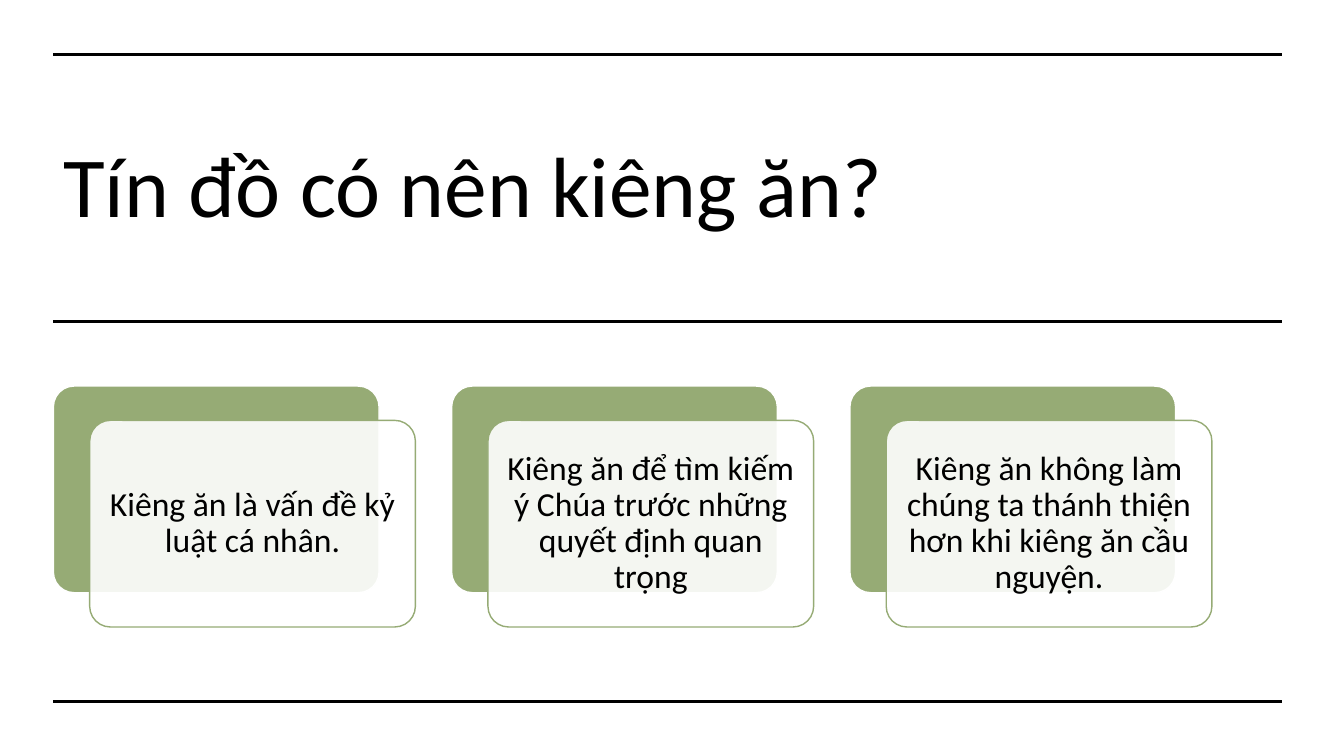
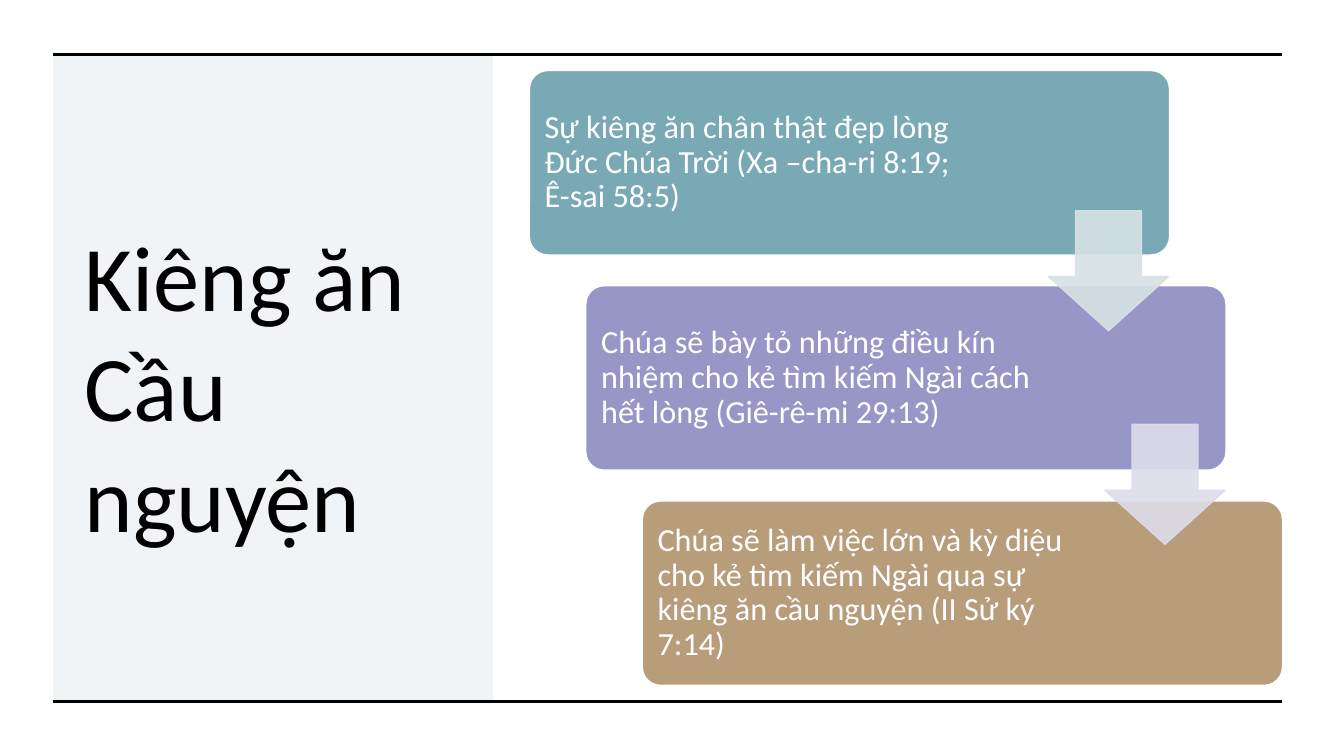
from lxml import etree
from pptx import Presentation
from pptx.dml.color import RGBColor
from pptx.enum.shapes import MSO_CONNECTOR, MSO_SHAPE
from pptx.enum.text import MSO_ANCHOR, PP_ALIGN
from pptx.oxml.ns import qn
from pptx.util import Inches, Pt

ROUNDED = MSO_SHAPE.ROUNDED_RECTANGLE
RECTANGLE = MSO_SHAPE.RECTANGLE
DOWN_ARROW = MSO_SHAPE.DOWN_ARROW
STRAIGHT = MSO_CONNECTOR.STRAIGHT
MIDDLE = MSO_ANCHOR.MIDDLE
LEFT, CENTER = PP_ALIGN.LEFT, PP_ALIGN.CENTER

BLACK = RGBColor(0x00, 0x00, 0x00)
WHITE = RGBColor(0xFF, 0xFF, 0xFF)
GREEN = RGBColor(0x96, 0xAB, 0x75)
PANEL_BLUE = RGBColor(0x7F, 0x95, 0xBA)
TEAL = RGBColor(0x7A, 0xA9, 0xB6)
PURPLE = RGBColor(0x98, 0x96, 0xC6)
TAN = RGBColor(0xB8, 0x9D, 0x7B)
PALE_TEAL = RGBColor(0xD7, 0xE2, 0xE5)
PALE_PURPLE = RGBColor(0xDD, 0xDD, 0xEA)

FONT = "Calibri"
MARGIN_LEFT, MARGIN_RIGHT = 0.53, 12.72
RULE_TOP, RULE_BOTTOM = 0.54, 6.96
TITLE_INSETS = (0.1, 0.05, 0.1, 0.05)


def add_box(page, kind, place, fill, line=None, opacity=100, adjustments=()):
    """Add a preset shape; opacity (percent) applies wherever the fill colour is used."""
    box = page.shapes.add_shape(kind, *map(Inches, place))
    box.shadow.inherit = False
    box.fill.solid()
    box.fill.fore_color.rgb = fill
    if line is None:
        box.line.fill.background()
    else:
        box.line.color.rgb = line
        box.line.width = Pt(1)
    for index, value in enumerate(adjustments):
        box.adjustments[index] = value
    if opacity < 100:
        for color in box._element.spPr.iter(qn("a:srgbClr")):
            if color.get("val") == str(fill):
                etree.SubElement(color, qn("a:alpha"), val=str(opacity * 1000))
    return box


def write(box, text, size, color, insets, align=LEFT, spacing=0.9):
    frame = box.text_frame
    left, top, right, bottom = map(Inches, insets)
    frame_format = {
        "word_wrap": True, "vertical_anchor": MIDDLE,
        "margin_left": left, "margin_top": top,
        "margin_right": right, "margin_bottom": bottom,
    }
    for name, value in frame_format.items():
        setattr(frame, name, value)
    para = frame.paragraphs[0]
    para.alignment = align
    para.line_spacing = spacing
    span = para.add_run()
    span.text = text
    for name, value in {"name": FONT, "size": Pt(size)}.items():
        setattr(span.font, name, value)
    span.font.color.rgb = color


deck = Presentation()
deck.slide_width, deck.slide_height = Inches(13.33), Inches(7.5)
blank = deck.slide_layouts[6]
cards_page = deck.slides.add_slide(blank)
steps_page = deck.slides.add_slide(blank)

# Side panel behind the second title
add_box(steps_page, RECTANGLE, (MARGIN_LEFT, RULE_TOP, 4.36, 6.41), PANEL_BLUE, opacity=10)

# Titles and horizontal rules
headings = [
    (cards_page, "Tín đồ có nên kiêng ăn?", (0.53, 1.07, 9.2, 1.63), 61, 0.9,
     (RULE_TOP, 3.19, RULE_BOTTOM)),
    (steps_page, "Kiêng ăn Cầu nguyện", (0.74, 1.07, 3.89, 5.5), 66, 1.0,
     (RULE_TOP, RULE_BOTTOM)),
]
for page, text, place, size, spacing, rules in headings:
    title = page.shapes.add_textbox(*map(Inches, place))
    write(title, text, size, BLACK, TITLE_INSETS, spacing=spacing)
    for y in rules:
        rule = page.shapes.add_connector(
            STRAIGHT, Inches(MARGIN_LEFT), Inches(y), Inches(MARGIN_RIGHT), Inches(y))
        rule.line.color.rgb = BLACK
        rule.line.width = Pt(2.25)
        etree.SubElement(rule._element.spPr, qn("a:effectLst"))

# Three cards, each a translucent panel over a green back
CARD_WIDTH, CARD_HEIGHT, CARD_PITCH = 3.23, 2.05, 3.95
cards = [
    "Kiêng ăn là vấn đề kỷ luật cá nhân.",
    "Kiêng ăn để tìm kiếm ý Chúa trước những quyết định quan trọng",
    "Kiêng ăn không làm chúng ta thánh thiện hơn khi kiêng ăn cầu nguyện.",
]
for index, text in enumerate(cards):
    x = MARGIN_LEFT + index * CARD_PITCH
    add_box(cards_page, ROUNDED, (x, 3.83, CARD_WIDTH, CARD_HEIGHT), GREEN, WHITE,
            adjustments=(0.1,))
    card = add_box(cards_page, ROUNDED, (x + 0.36, 4.17, CARD_WIDTH, CARD_HEIGHT),
                   WHITE, GREEN, 90, (0.1,))
    write(card, text, 24, BLACK, (0.1, 0.1, 0.1, 0.1), CENTER)

# Staircase of steps; the right inset keeps text clear of the arrows
STEP_LEFT, STEP_TOP, STEP_SHIFT, STEP_DROP = 5.25, 0.7, 0.56, 2.135
ARROW_LEFT, ARROW_TOP, ARROW_DROP, ARROW_SIZE = 10.4, 2.09, 2.12, 1.19
steps = [
    ("Sự kiêng ăn chân thật đẹp lòng Đức Chúa Trời (Xa –cha-ri 8:19; Ê-sai 58:5)",
     TEAL, 1.98),
    ("Chúa sẽ bày tỏ những điều kín nhiệm cho kẻ tìm kiếm Ngài cách hết lòng "
     "(Giê-rê-mi 29:13)", PURPLE, 1.86),
    ("Chúa sẽ làm việc lớn và kỳ diệu cho kẻ tìm kiếm Ngài qua sự kiêng ăn cầu nguyện "
     "(II Sử ký 7:14)", TAN, 1.86),
]
for index, (text, color, right_inset) in enumerate(steps):
    place = (STEP_LEFT + index * STEP_SHIFT, STEP_TOP + index * STEP_DROP, 6.35, 1.83)
    step = add_box(steps_page, ROUNDED, place, color, WHITE, adjustments=(0.1,))
    write(step, text, 23, WHITE, (0.1, 0.1, right_inset, 0.1))

for index, color in enumerate((PALE_TEAL, PALE_PURPLE)):
    place = (ARROW_LEFT + index * STEP_SHIFT, ARROW_TOP + index * ARROW_DROP,
             ARROW_SIZE, ARROW_SIZE)
    add_box(steps_page, DOWN_ARROW, place, color, color, 90, (0.55, 0.45))

deck.save("out.pptx")
